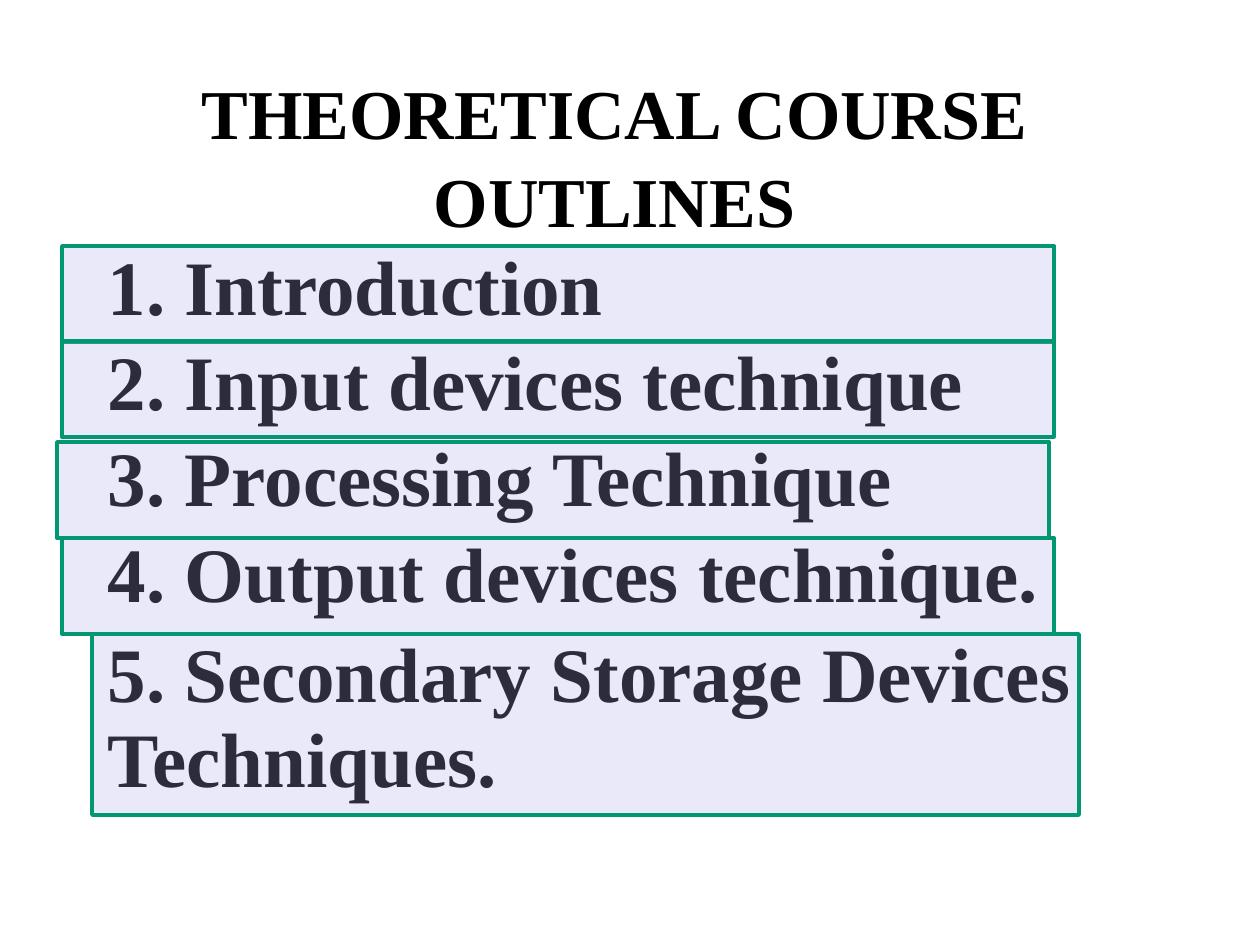
from lxml import etree
from pptx import Presentation
from pptx.dml.color import RGBColor
from pptx.enum.shapes import MSO_SHAPE
from pptx.enum.text import MSO_ANCHOR, PP_ALIGN
from pptx.oxml.ns import qn
from pptx.util import Pt

RECT = MSO_SHAPE.RECTANGLE
MIDDLE = MSO_ANCHOR.MIDDLE
BOTTOM = MSO_ANCHOR.BOTTOM
CENTER = PP_ALIGN.CENTER

BLACK = RGBColor(0x00, 0x00, 0x00)
LILAC = RGBColor(0xAD, 0xAD, 0xEB)
GREEN = RGBColor(0x00, 0x97, 0x71)

FACE = "Times New Roman"
SCALE = 914400 / 126

TOPICS = [
    "1. Introduction",
    "2. Input devices technique",
    "3. Processing Technique",
    "4. Output devices technique.",
    "5. Secondary Storage Devices Techniques.",
    "",
]
ROWS = [96, 96, 96, 96, 188, 96]
BARS = [
    (62, 246, 992, 96),
    (62, 341, 992, 96),
    (57, 442, 992, 96),
    (62, 538, 992, 96),
    (92, 634, 987, 181),
]


def px(n):
    return round(n * SCALE)


def style(para, size):
    font = para.font
    font.name = FACE
    font.size = Pt(size)
    font.bold = True
    font.color.rgb = BLACK


def add_title(slide, text, box):
    frame = slide.shapes.add_textbox(*map(px, box)).text_frame
    frame.word_wrap = True
    frame.vertical_anchor = BOTTOM
    para = frame.paragraphs[0]
    para.text = text
    para.alignment = CENTER
    para.line_spacing = 1.05
    style(para, 40)


def add_list(slide, left, top, width):
    box = map(px, (left, top, width, sum(ROWS)))
    table = slide.shapes.add_table(len(ROWS), 1, *box).table
    table.first_row = False
    table.horz_banding = False
    for row, high, topic in zip(table.rows, ROWS, TOPICS):
        row.height = px(high)
        cell = row.cells[0]
        cell.fill.background()
        cell.vertical_anchor = MIDDLE
        cell.margin_left = cell.margin_right = px(1)
        cell.margin_top = cell.margin_bottom = px(1)
        cell.text = topic
        style(cell.text_frame.paragraphs[0], 44)


def add_bar(slide, box):
    bar = slide.shapes.add_shape(RECT, *map(px, box))
    bar.shadow.inherit = False
    bar.fill.solid()
    bar.fill.fore_color.rgb = LILAC
    color = bar.fill._xPr.find(qn("a:solidFill"))[0]
    etree.SubElement(color, qn("a:alpha"), val="26000")
    bar.line.color.rgb = GREEN
    bar.line.width = Pt(2)


def main():
    deck = Presentation()
    deck.slide_width = px(1260)
    deck.slide_height = px(945)
    slide = deck.slides.add_slide(deck.slide_layouts[6])
    add_title(slide, "THEORETICAL COURSE OUTLINES", (11, 65, 1207, 183))
    add_list(slide, 107, 241, 1082)
    for box in BARS:
        add_bar(slide, box)
    deck.save("out.pptx")


if __name__ == "__main__":
    main()
